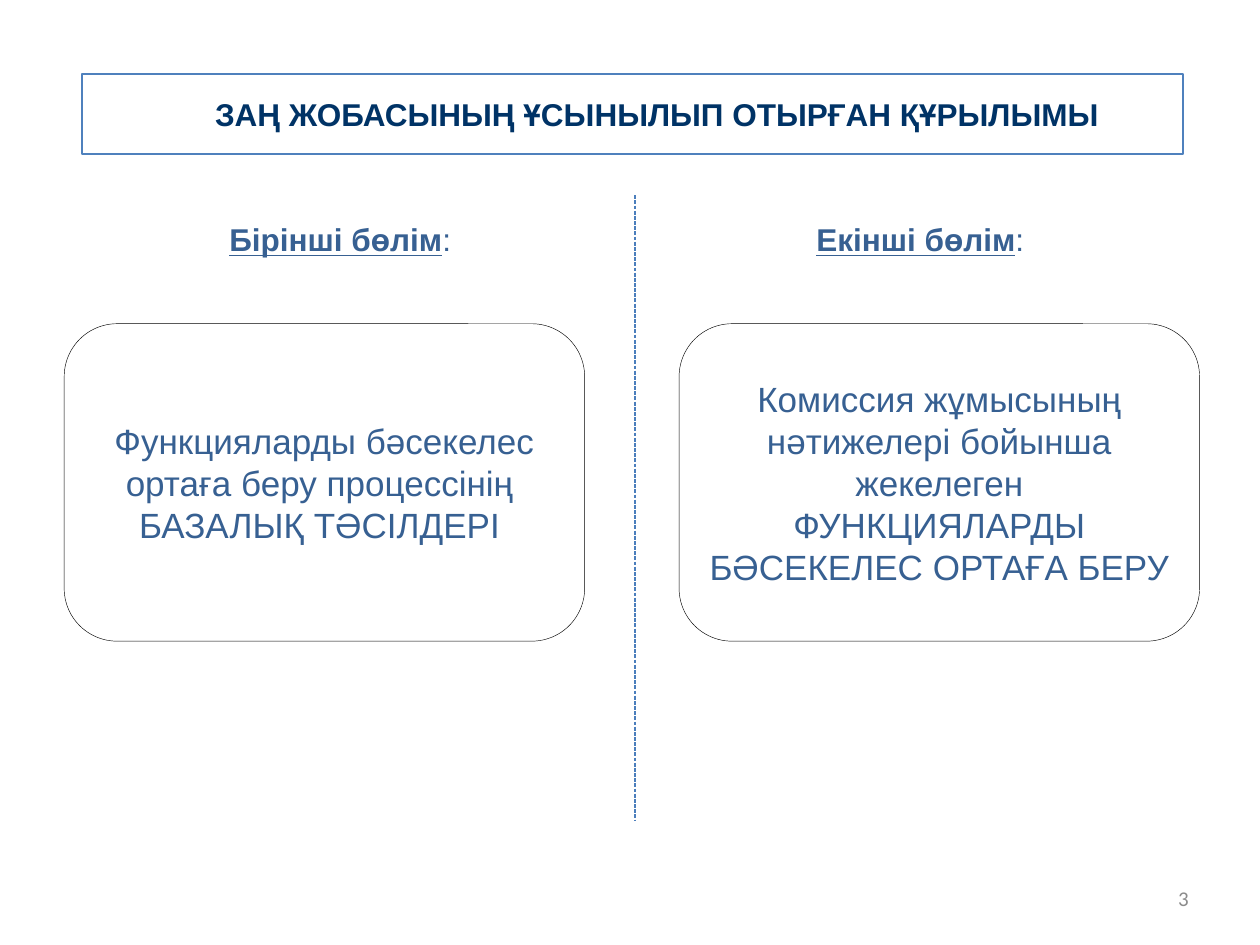
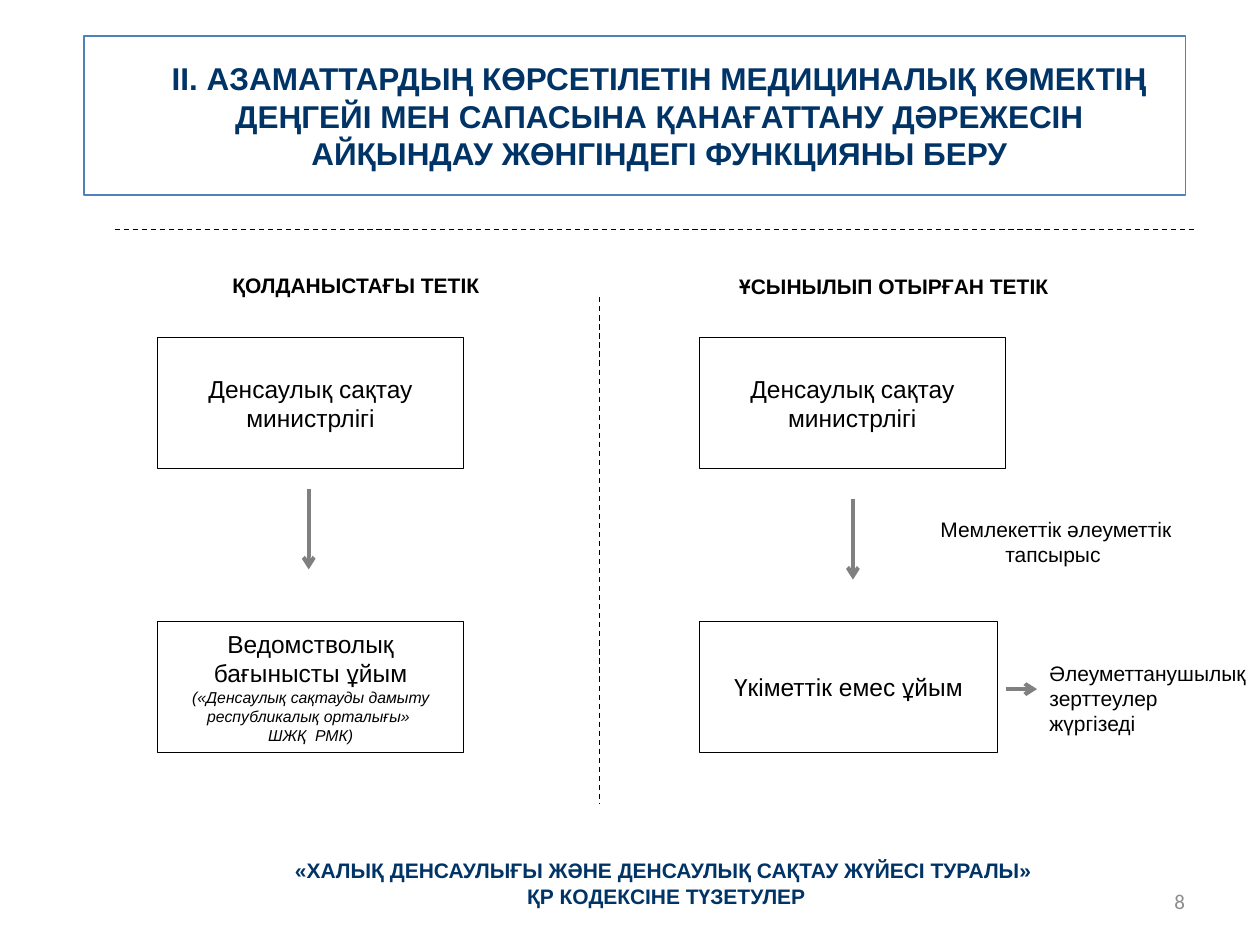
from lxml import etree
from pptx import Presentation
from pptx import util as u
from pptx.dml import color
from pptx.enum import dml, shapes, text
from pptx.oxml import ns

COLOURS = {
    "navy": "003366", "steel": "376092", "frame": "4F81BD", "divider": "4B7EBC",
    "black": "000000", "white": "FFFFFF", "arrow": "808080", "number": "8C8C8C",
}
RGB = {name: color.RGBColor.from_string(value) for name, value in COLOURS.items()}
DASH = dml.MSO_LINE.DASH
CENTER, LEFT, RIGHT = text.PP_ALIGN.CENTER, text.PP_ALIGN.LEFT, text.PP_ALIGN.RIGHT


def write(frame, paragraphs, colour, align=CENTER, indent=0, font="Arial", middle=True):
    """Each paragraph is a list of (text, size, style letters) runs."""
    frame.word_wrap = True
    frame.auto_size = text.MSO_AUTO_SIZE.NONE
    frame.vertical_anchor = text.MSO_ANCHOR.MIDDLE if middle else text.MSO_ANCHOR.TOP
    for index, runs in enumerate(paragraphs):
        paragraph = frame.add_paragraph() if index else frame.paragraphs[0]
        paragraph.alignment = align
        if indent:
            paragraph._p.get_or_add_pPr().set("marL", str(u.Pt(indent)))
        for words, size, style in runs:
            for row, line in enumerate(words.split("\n")):
                if row:
                    paragraph.add_line_break()
                run = paragraph.add_run()
                run.text = line
                run.font.name, run.font.size = font, u.Pt(size)
                run.font.bold, run.font.italic = "b" in style, "i" in style
                run.font.underline = "u" in style
                run.font.color.rgb = RGB[colour]


def add_line(slide, x1, y1, x2, y2, colour, width, dash=None, arrow=False):
    line = slide.shapes.add_connector(
        shapes.MSO_CONNECTOR.STRAIGHT, u.Pt(x1), u.Pt(y1), u.Pt(x2), u.Pt(y2))
    line.line.color.rgb = RGB[colour]
    line.line.width = u.Pt(width)
    if dash:
        line.line.dash_style = dash
    if arrow:
        etree.SubElement(line.line._get_or_add_ln(), ns.qn("a:tailEnd"), type="arrow")
    etree.SubElement(line._element.spPr, ns.qn("a:effectLst"))


prs = Presentation()
prs.slide_width, prs.slide_height = u.Pt(720), u.Pt(540)

# Framed title and page number on both slides
headers = [
    ("ЗАҢ ЖОБАСЫНЫҢ ҰСЫНЫЛЫП ОТЫРҒАН ҚҰРЫЛЫМЫ", (46.8, 42.5, 629.3, 45.4),
     "3", (518.4, 499)),
    ("II. АЗАМАТТАРДЫҢ КӨРСЕТІЛЕТІН МЕДИЦИНАЛЫҚ КӨМЕКТІҢ ДЕҢГЕЙІ МЕН САПАСЫНА "
     "ҚАНАҒАТТАНУ ДӘРЕЖЕСІН АЙҚЫНДАУ ЖӨНГІНДЕГІ ФУНКЦИЯНЫ БЕРУ",
     (48.2, 20.6, 629.3, 90.7), "8", (516.2, 500.4)),
]
for heading, (x, y, w, h), page, (page_x, page_y) in headers:
    slide = prs.slides.add_slide(prs.slide_layouts[5])
    title = slide.shapes.title
    title.left, title.top, title.width, title.height = u.Pt(x), u.Pt(y), u.Pt(w), u.Pt(h)
    title.fill.solid()
    title.fill.fore_color.rgb = RGB["white"]
    title.line.color.rgb = RGB["frame"]
    title.line.width = u.Pt(1)
    write(title.text_frame, [[(heading, 18, "b")]], "navy", indent=28)
    number = slide.shapes.add_textbox(u.Pt(page_x), u.Pt(page_y), u.Pt(168), u.Pt(28.8))
    write(number.text_frame, [[(page, 12, "")]], "number", RIGHT, font="Calibri")
structure, transfer = prs.slides

# Structure: two parts of the bill
parts = [
    (36.7, 123.1, 147.6, "Бірінші бөлім",
     "Функцияларды бәсекелес ортаға беру процессінің \nБАЗАЛЫҚ ТӘСІЛДЕРІ "),
    (388.1, 458.6, 139.7, "Екінші бөлім",
     "Комиссия жұмысының нәтижелері бойынша жекелеген ФУНКЦИЯЛАРДЫ "
     "БӘСЕКЕЛЕС ОРТАҒА БЕРУ"),
]
for part_x, name_x, name_w, name, content in parts:
    part = structure.shapes.add_shape(
        shapes.MSO_SHAPE.ROUNDED_RECTANGLE, u.Pt(part_x), u.Pt(185), u.Pt(297.4), u.Pt(181.4))
    part.shadow.inherit = False
    part.fill.background()
    part.line.color.rgb = RGB["black"]
    part.line.width = u.Pt(0.25)
    write(part.text_frame, [[(content, 20, "")]], "steel")
    part_name = structure.shapes.add_textbox(
        u.Pt(name_x), u.Pt(122.4), u.Pt(name_w), u.Pt(28.8))
    write(part_name.text_frame, [[(name, 18, "bu"), (": ", 18, "")]], "steel", middle=False)
    part_name.text_frame.word_wrap = False
add_line(structure, 362.9, 111.6, 362.9, 468.7, "divider", 0.75, dml.MSO_LINE.SQUARE_DOT)

# Transfer: dividers between heading, current and proposed mechanism
add_line(transfer, 65.5, 131, 683.3, 131, "black", 0.75, DASH)
add_line(transfer, 342.7, 169.9, 342.7, 459.4, "black", 0.75, DASH)

# Bodies that hold the function
ministry = [[("Денсаулық сақтау министрлігі", 14, "")]]
subordinate = [
    [("Ведомстволық бағынысты ұйым", 14, "")],
    [("(«Денсаулық сақтауды дамыту республикалық орталығы» \nШЖҚ  РМК)", 9, "i")],
]
non_government = [[("Үкіметтік емес ұйым", 14, "")]]
ministry_y, executor_y = 193, 355
for x, y, w, content in [
    (90, ministry_y, 175, ministry),
    (90, executor_y, 175, subordinate),
    (399.6, ministry_y, 175, ministry),
    (399.6, executor_y, 170.6, non_government),
]:
    body = transfer.shapes.add_shape(
        shapes.MSO_SHAPE.RECTANGLE, u.Pt(x), u.Pt(y), u.Pt(w), u.Pt(74.9))
    body.shadow.inherit = False
    body.fill.background()
    body.line.color.rgb = RGB["black"]
    body.line.width = u.Pt(0.5)
    write(body.text_frame, content, "black")

# Arrows along the mechanism
for x1, y1, x2, y2 in [
    (176.4, 279.4, 176.4, 325.4),
    (487.4, 285.1, 487.4, 331.2),
    (574.6, 393.8, 592.6, 393.8),
]:
    add_line(transfer, x1, y1, x2, y2, "arrow", 2.25, arrow=True)

# Column names, notes beside the arrows and the closing line
code = [
    [("«ХАЛЫҚ ДЕНСАУЛЫҒЫ ЖӘНЕ ДЕНСАУЛЫҚ САҚТАУ ЖҮЙЕСІ ТУРАЛЫ» ", 12, "b")],
    [("ҚР КОДЕКСІНЕ ТҮЗЕТУЛЕР", 12, "b")],
]
for (x, y, w, h), content, colour, align, indent in [
    ((97.9, 151.9, 211, 21.8), [[("ҚОЛДАНЫСТАҒЫ ТЕТІК", 12, "b")]], "black", CENTER, 0),
    ((411.8, 152.6, 198, 21.8), [[("ҰСЫНЫЛЫП ОТЫРҒАН ТЕТІК", 12, "b")]], "black", CENTER, 0),
    ((528.5, 291.6, 149.8, 36), [[("Мемлекеттік әлеуметтік тапсырыс ", 12, "")]],
     "black", CENTER, 0),
    ((592.6, 373.7, 127.4, 51), [[("Әлеуметтанушылық зерттеулер жүргізеді", 12, "")]],
     "black", LEFT, 0),
    ((131, 486.7, 471.6, 36), code, "navy", CENTER, 28),
]:
    note = transfer.shapes.add_textbox(u.Pt(x), u.Pt(y), u.Pt(w), u.Pt(h))
    write(note.text_frame, content, colour, align, indent, middle=False)

prs.save("out.pptx")
